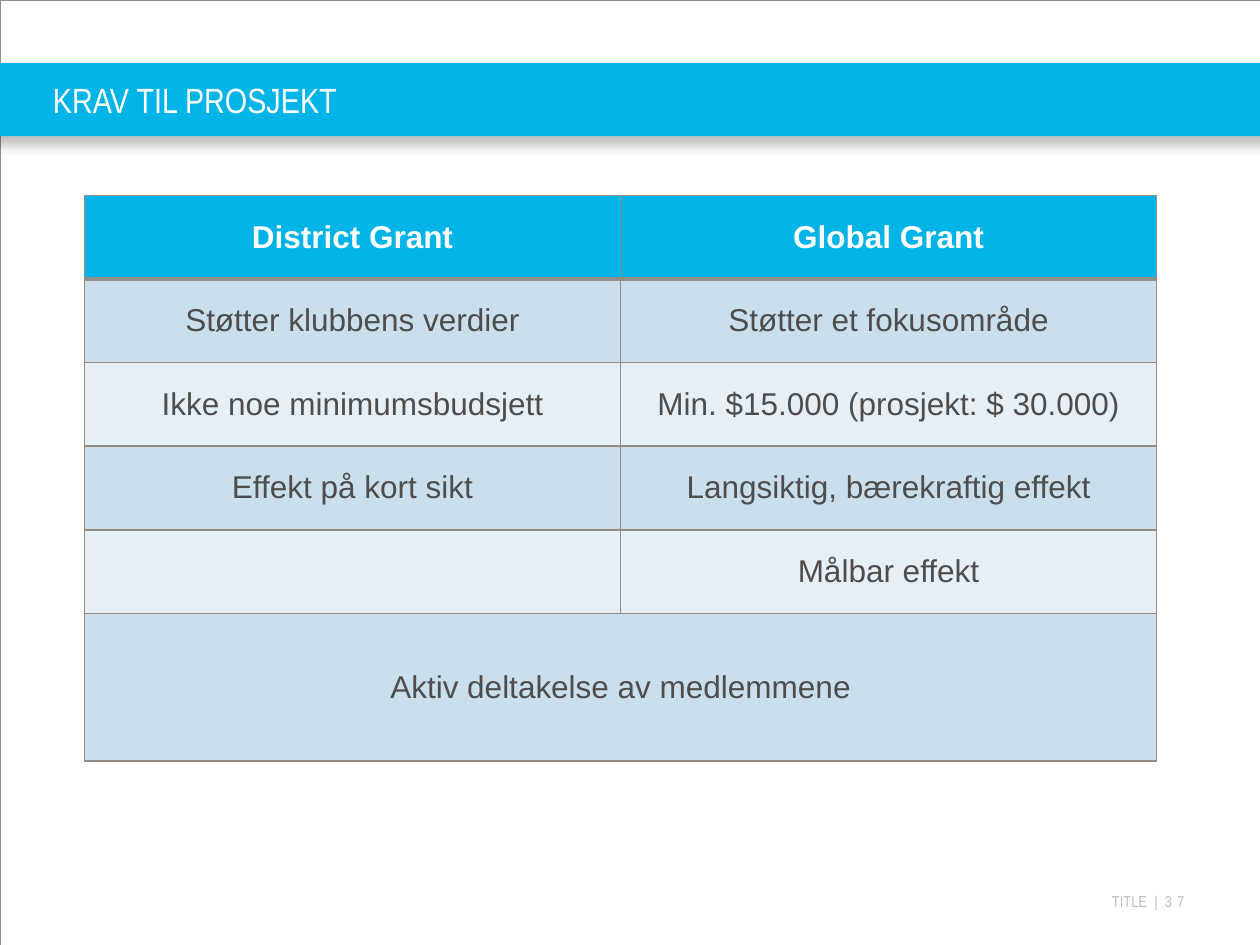
from lxml.etree import SubElement as Sub
from pptx import Presentation
from pptx.dml.color import RGBColor as Rgb
from pptx.enum.shapes import MSO_SHAPE as Kind
from pptx.enum.text import MSO_ANCHOR as Anchor, PP_ALIGN as Align
from pptx.oxml.ns import qn
from pptx.util import Inches, Pt

WIDE, HIGH = 10, 7.5
HUES = {
    "blue": "01B4E7",
    "rule": "958D85",
    "dark": "CBDEEC",
    "pale": "E7EFF6",
    "ink": "4D4D4D",
    "white": "FFFFFF",
    "grey": "BCBDC0",
    "black": "000000",
}
BAND = 0.5, 0.58  # top and height of the title band
ROWS = [
    ("District Grant", "Global Grant"),
    ("Støtter klubbens verdier", "Støtter et fokusområde"),
    ("Ikke noe minimumsbudsjett", "Min. $15.000 (prosjekt: $ 30.000)"),
    ("Effekt på kort sikt", "Langsiktig, bærekraftig effekt"),
    ("", "Målbar effekt"),
    ("Aktiv deltakelse av medlemmene", ""),
]


def hue(name):
    return Rgb.from_string(HUES[name])


def style(font, face, size, color, bold=False):
    font.name, font.size, font.bold = face, Pt(size), bold
    font.color.rgb = hue(color)


def add_rect(slide, *box):
    rect = slide.shapes.add_shape(Kind.RECTANGLE, *map(Inches, box))
    rect.shadow.inherit = False
    return rect


def add_frame(slide):
    rect = add_rect(slide, 0, 0, WIDE, HIGH)
    rect.fill.background()
    rect.line.color.rgb = hue("rule")
    rect.line.width = Pt(0.13)


def add_band(slide):
    """Draw the title band with a soft shadow below it."""
    top, high = BAND
    rect = add_rect(slide, -0.08, top, WIDE + 0.17, high)
    rect.fill.solid()
    rect.fill.fore_color.rgb = hue("blue")
    rect.line.fill.background()
    glow = rect._element.spPr.find(qn("a:effectLst"))
    cast = Sub(glow, qn("a:outerShdw"), blurRad=str(Pt(7)),
               dist=str(Pt(4.8)), dir="5400000", rotWithShape="0")
    tint = Sub(cast, qn("a:srgbClr"), val=HUES["black"])
    Sub(tint, qn("a:alpha"), val="25000")


def add_text(slide, box, parts, size, color, align):
    """Add one line of text made of several runs, and return the runs."""
    frame = slide.shapes.add_textbox(*map(Inches, box)).text_frame
    frame.word_wrap = True
    frame.vertical_anchor = Anchor.MIDDLE
    frame.margin_left = frame.margin_right = 0
    frame.margin_top = frame.margin_bottom = 0
    para = frame.paragraphs[0]
    para.alignment = align
    for part in parts:
        run = para.add_run()
        run.text = part
        style(run.font, "Arial Narrow", size, color)
    return para.runs


def set_edges(cell, row):
    """Rule all four sides, with a heavy line under the header."""
    props = cell._tc.get_or_add_tcPr()
    heavy = {0: "B", 1: "T"}.get(row)
    for side in "LRTB":
        width = Pt(3 if side == heavy else 1)
        line = Sub(props, qn(f"a:ln{side}"), w=str(width))
        fill = Sub(line, qn("a:solidFill"))
        Sub(fill, qn("a:srgbClr"), val=HUES["rule"])


def set_cell(cell, text, row):
    head = row == 0
    set_edges(cell, row)
    cell.fill.solid()
    back = "blue" if head else ("pale", "dark")[row % 2]
    cell.fill.fore_color.rgb = hue(back)
    cell.vertical_anchor = Anchor.MIDDLE
    cell.text_frame.text = text
    para = cell.text_frame.paragraphs[0]
    para.alignment = Align.CENTER
    style(para.font, "Arial", 18, "white" if head else "ink", head)
    for run in para.runs:
        style(run.font, "Arial", 18, "white" if head else "ink", head)


def add_grid(slide):
    high, last = 4.49, 1.17
    count = len(ROWS)
    box = map(Inches, (0.67, 1.55, 8.51, high))
    table = slide.shapes.add_table(count, 2, *box).table
    table.first_row = table.horz_banding = False
    for row, texts in enumerate(ROWS):
        step = last if row == count - 1 else (high - last) / (count - 1)
        table.rows[row].height = Inches(step)
        for col, text in enumerate(texts):
            set_cell(table.cell(row, col), text, row)
    table.cell(count - 1, 0).merge(table.cell(count - 1, 1))


def main():
    deck = Presentation()
    deck.slide_width, deck.slide_height = Inches(WIDE), Inches(HIGH)
    slide = deck.slides.add_slide(deck.slide_layouts[6])
    foot = add_text(slide, (7.75, 7.08, 1.65, 0.15), ["TITLE  |  ", "37"],
                    9, "grey", Align.RIGHT)
    foot[1].font._element.set("spc", "300")
    add_frame(slide)
    add_band(slide)
    add_grid(slide)
    top, high = BAND
    add_text(slide, (0.42, top, WIDE - 0.42, high), ["KRAV TIL PROSJEKT"],
             20, "white", Align.LEFT)
    deck.save("out.pptx")


if __name__ == "__main__":
    main()
